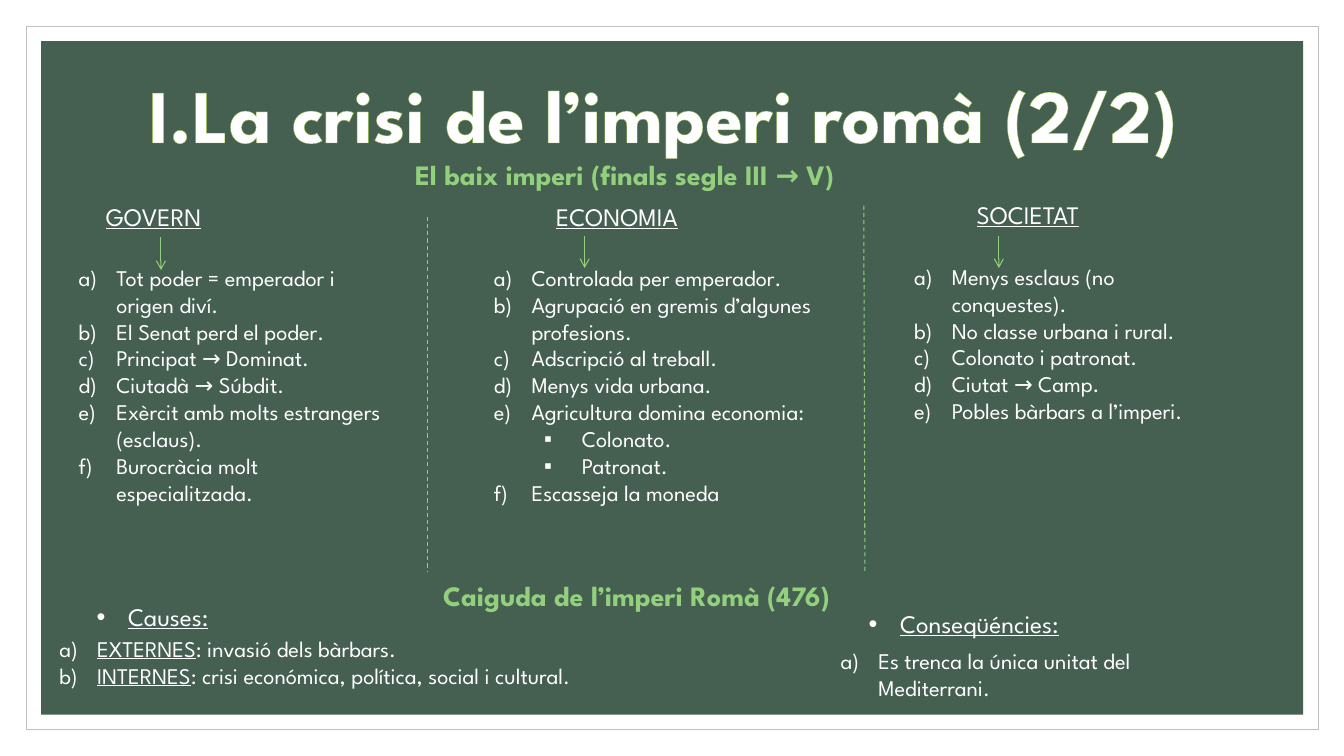
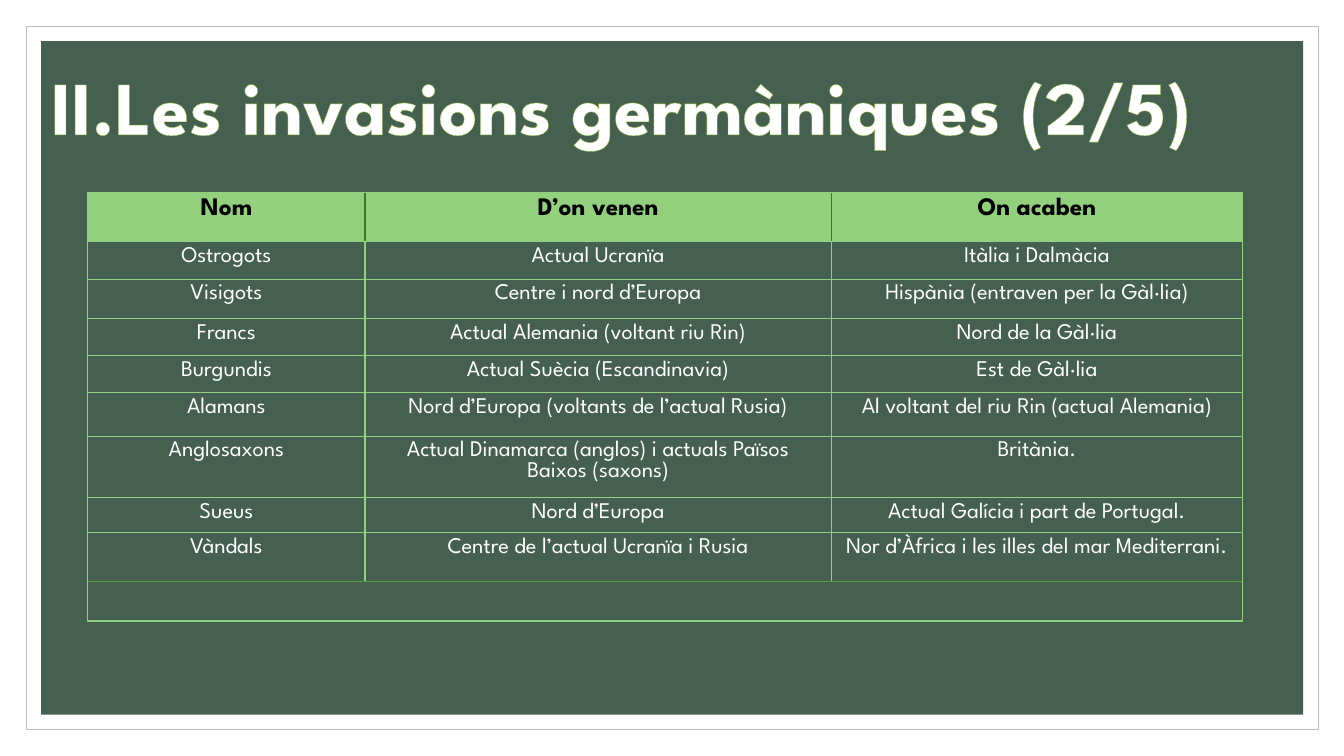
from lxml import etree
from pptx import Presentation
from pptx import util as u
from pptx.dml.color import RGBColor
from pptx.enum import dml, shapes, text
from pptx.oxml.ns import qn

FONT = "League Spartan"
WHITE, BLACK, GREY = "FFFFFF", "000000", "BFBFBF"
BOARD, LIGHT, LIME = "455F51", "93D07D", "8AB833"
GREEN, DARK = "549E39", "3F762B"
CENTER = text.PP_ALIGN.CENTER

# Bullet kinds: left margin, hanging indent, level, tag, attributes
BULLETS = {
    "letter": (27, 27, 0, "a:buAutoNum", {"type": "alphaLcParenR"}),
    "dot": (22.5, 22.5, 0, "a:buChar", {"char": "•"}),
    "square": (63, 27, 1, "a:buChar", {"char": "▪"}),
}

CRISIS_TITLE = "I.La crisi de l’imperi romà (2/2)"
INVASIONS_TITLE = "II.Les invasions germàniques (2/5)"

# Text, box
SUBTITLES = [
    ("El baix imperi (finals segle III → V)", (275, 108.7, 342.7, 32)),
    ("Caiguda de l’imperi Romà (476)", (291, 409.7, 327.6, 32)),
]

# An item in a list is text, or (bullet kind, text)
COLUMNS = [
    {"heading": "GOVERN", "box": (68.5, 140.4, 93, 29), "arrow": (115, 169.9),
     "list_at": (49, 185),
     "items": ["Tot poder = emperador i origen diví.", "El Senat perd el poder.",
               "Principat → Dominat.", "Ciutadà → Súbdit.",
               "Exèrcit amb molts estrangers (esclaus).",
               "Burocràcia molt especialitzada."]},
    {"heading": "ECONOMIA", "box": (390.2, 140.4, 118, 29), "arrow": (417.6, 168.5),
     "list_at": (345.6, 185),
     "items": ["Controlada per emperador.",
               "Agrupació en gremis d’algunes profesions.",
               "Adscripció al treball.", "Menys vida urbana.",
               "Agricultura domina economia:", ("square", "Colonato."),
               ("square", "Patronat."), "Escasseja la moneda"]},
    {"heading": "SOCIETAT", "box": (690.5, 139, 97.2, 29), "arrow": (713.5, 168.5),
     "list_at": (645.8, 184.3),
     "items": ["Menys esclaus (no conquestes).", "No classe urbana i rural.",
               "Colonato i patronat.", "Ciutat → Camp.",
               "Pobles bàrbars a l’imperi."]},
]
LIST_WIDTH, ARROW_LENGTH = 242, 23
DIVIDERS = [(305.3, 154.8, 305.3, 408.2), (617, 146.9, 617.8, 409.7)]

# Heading, heading box, list box, items as (underlined part, plain part)
FALL = [
    ("Causes:", (61.9, 426.2, 106.6, 29), (35.3, 450, 444, 67),
     [("EXTERNES", ": invasió dels bàrbars."),
      ("INTERNES", ": crisi económica, política, social i cultural.")]),
    ("Conseqüéncies:", (613.4, 431.3, 180, 29), (593.3, 458.6, LIST_WIDTH, 67),
     [("", "Es trenca la única unitat del Mediterrani.")]),
]

PEOPLES = [
    ("Nom", "D’on venen", "On acaben"),
    ("Ostrogots", "Actual Ucranïa", "Itàlia i Dalmàcia"),
    ("Visigots", "Centre i nord d’Europa", "Hispània (entraven per la Gàl·lia)"),
    ("Francs", "Actual Alemania (voltant riu Rin)", "Nord de la Gàl·lia"),
    ("Burgundis", "Actual Suècia (Escandinavia)", "Est de Gàl·lia"),
    ("Alamans", "Nord d’Europa (voltants de l’actual Rusia)",
     "Al voltant del riu Rin (actual Alemania)"),
    ("Anglosaxons", "Actual Dinamarca (anglos) i actuals Països Baixos (saxons)",
     "Britània."),
    ("Sueus", "Nord d’Europa", "Actual Galícia i part de Portugal."),
    ("Vàndals", "Centre de l’actual Ucranïa i Rusia",
     "Nor d’Àfrica i les illes del mar Mediterrani."),
]
TABLE_BOX = (62.7, 137.4, 825, 306.2)
COLUMN_WIDTHS = [198, 333, 294]
ROW_HEIGHTS = [35, 27, 28.3, 26.5, 26.5, 31, 35.6, 23.7, 35.2]


def color(value):
    return RGBColor.from_string(value)


def points(values):
    return [u.Pt(value) for value in values]


def add_child(parent, tag, **attributes):
    return etree.SubElement(parent, qn(tag), attributes)


def add_solid(parent, value):
    add_child(add_child(parent, "a:solidFill"), "a:srgbClr", val=value)


def add_span(para, words, size=16, ink=WHITE, bold=False, underline=False, outline=None):
    span = para.add_run()
    span.text = words
    font = span.font
    font.name, font.size, font.bold = FONT, u.Pt(size), bold
    font.underline = underline
    font.color.rgb = color(ink)
    if outline:
        line = etree.Element(qn("a:ln"), w=str(u.Pt(0.52)))
        add_solid(line, outline)
        font._element.insert(0, line)


def set_bullet(para, kind):
    margin, hanging, level, tag, attributes = BULLETS[kind]
    para.level = level
    props = para._p.get_or_add_pPr()
    props.set("marL", str(u.Pt(margin)))
    props.set("indent", str(-u.Pt(hanging)))
    add_child(props, "a:buFont", typeface="Arial" if tag == "a:buChar" else "+mj-lt")
    add_child(props, tag, **attributes)


def add_text(page, box, paras, align=None, bullet=None, spacing=None,
             anchor=text.MSO_ANCHOR.TOP, **style):
    """Each para is text, (bullet kind, text), or a list of (words, underline)."""
    shape = page.shapes.add_textbox(*points(box))
    frame = shape.text_frame
    frame.word_wrap = True
    frame.vertical_anchor = anchor
    for index, content in enumerate(paras):
        para = frame.add_paragraph() if index else frame.paragraphs[0]
        para.alignment, para.line_spacing = align, spacing
        kind = bullet
        if isinstance(content, tuple):
            kind, content = content
        if kind:
            set_bullet(para, kind)
        if isinstance(content, str):
            add_span(para, content, **style)
        else:
            for words, underline in content:
                add_span(para, words, underline=underline, **style)
    return shape


def add_title(page, words, box, **layout):
    add_text(page, box, [words], size=54, bold=True, outline=LIME, **layout)


def add_rectangle(page, box, fill=None, line=None, width=1):
    shape = page.shapes.add_shape(shapes.MSO_SHAPE.RECTANGLE, *points(box))
    shape.shadow.inherit = False
    if fill:
        shape.fill.solid()
        shape.fill.fore_color.rgb = color(fill)
    else:
        shape.fill.background()
    if line:
        shape.line.color.rgb = color(line)
        shape.line.width = u.Pt(width)
    else:
        shape.line.fill.background()


def add_line(page, ends, dashed=False, arrow=False):
    line = page.shapes.add_connector(shapes.MSO_CONNECTOR.STRAIGHT, *points(ends))
    line.line.color.rgb = color(LIGHT)
    line.line.width = u.Pt(0.75)
    if dashed:
        line.line.dash_style = dml.MSO_LINE.DASH
    if arrow:
        add_child(line.line._get_or_add_ln(), "a:tailEnd", type="arrow")
    add_child(line._element.spPr, "a:effectLst")
    return line


def set_border(cell, side, ink, width):
    props = cell._tc.get_or_add_tcPr()
    line = etree.Element(qn(f"a:ln{side}"), w=str(u.Pt(width)))
    add_solid(line, ink)
    props.insert("LRTB".index(side), line)


def cell_borders(row, column):
    """Sides in schema order, each with its colour and width."""
    header, last_row = row == 0, row == len(PEOPLES) - 1
    inner, edge = (DARK if header else LIGHT, 1), (GREEN, 0.5)
    return {
        "L": inner if column else edge,
        "R": inner,
        "T": edge if header else (LIGHT, 1),
        "B": edge if last_row else (LIGHT, 1),
    }


def add_peoples_table(page):
    left, top, width, _ = TABLE_BOX
    box = points((left, top, width, sum(ROW_HEIGHTS)))
    table = page.shapes.add_table(len(PEOPLES), len(COLUMN_WIDTHS), *box).table
    table.first_row = table.horz_banding = False
    for column, size in zip(table.columns, COLUMN_WIDTHS):
        column.width = u.Pt(size)
    for row, size in zip(table.rows, ROW_HEIGHTS):
        row.height = u.Pt(size)
    for i, people in enumerate(PEOPLES):
        header = i == 0
        for j, words in enumerate(people):
            cell = table.cell(i, j)
            cell.margin_top, cell.margin_bottom = u.Pt(3.6), u.Pt(2)
            if header:
                cell.fill.solid()
                cell.fill.fore_color.rgb = color(LIGHT)
            else:
                cell.fill.background()
            for side, (ink, line_width) in cell_borders(i, j).items():
                set_border(cell, side, ink, line_width)
            para = cell.text_frame.paragraphs[0]
            para.alignment = CENTER
            add_span(para, words, size=18 if header else 16,
                     ink=BLACK if header else WHITE, bold=header)


def add_page(deck):
    page = deck.slides.add_slide(deck.slide_layouts[6])
    add_rectangle(page, (18.7, 18.7, 923, 502.6), fill=WHITE, line=GREY, width=0.5)
    add_rectangle(page, (29.4, 29.4, 901.4, 481), fill=BOARD)
    return page


def add_column(page, column):
    heading = add_text(page, column["box"], [column["heading"]], size=18, underline=True)
    add_text(page, (*column["list_at"], LIST_WIDTH, 204), column["items"], bullet="letter")
    x, y = column["arrow"]
    arrow = add_line(page, (x, y, x, y + ARROW_LENGTH), arrow=True)
    left, _, width, _ = column["box"]
    if x == left + width / 2:
        arrow.begin_connect(heading, 2)


def build_crisis(deck):
    page = add_page(deck)
    add_title(page, CRISIS_TITLE, (65.5, 44.6, 816.5, 72.7), align=CENTER)
    for words, box in SUBTITLES:
        add_text(page, box, [words], align=CENTER, size=20, ink=LIGHT, bold=True)
    for ends in DIVIDERS:
        add_line(page, ends, dashed=True)
    for column in COLUMNS:
        add_column(page, column)
    for heading, heading_box, list_box, items in FALL:
        add_text(page, heading_box, [heading], bullet="dot", size=18, underline=True)
        paras = [[(words, underline) for words, underline in zip(item, (True, False)) if words]
                 for item in items]
        add_text(page, list_box, paras, bullet="letter")


def build_invasions(deck):
    page = add_page(deck)
    add_title(page, INVASIONS_TITLE, (29.5, 43.2, 913, 71.3), spacing=0.9,
              anchor=text.MSO_ANCHOR.MIDDLE)
    add_peoples_table(page)
    add_rectangle(page, TABLE_BOX, line=LIGHT)


def main():
    deck = Presentation()
    deck.slide_width, deck.slide_height = u.Pt(960), u.Pt(540)
    build_crisis(deck)
    build_invasions(deck)
    deck.save("out.pptx")


if __name__ == "__main__":
    main()
